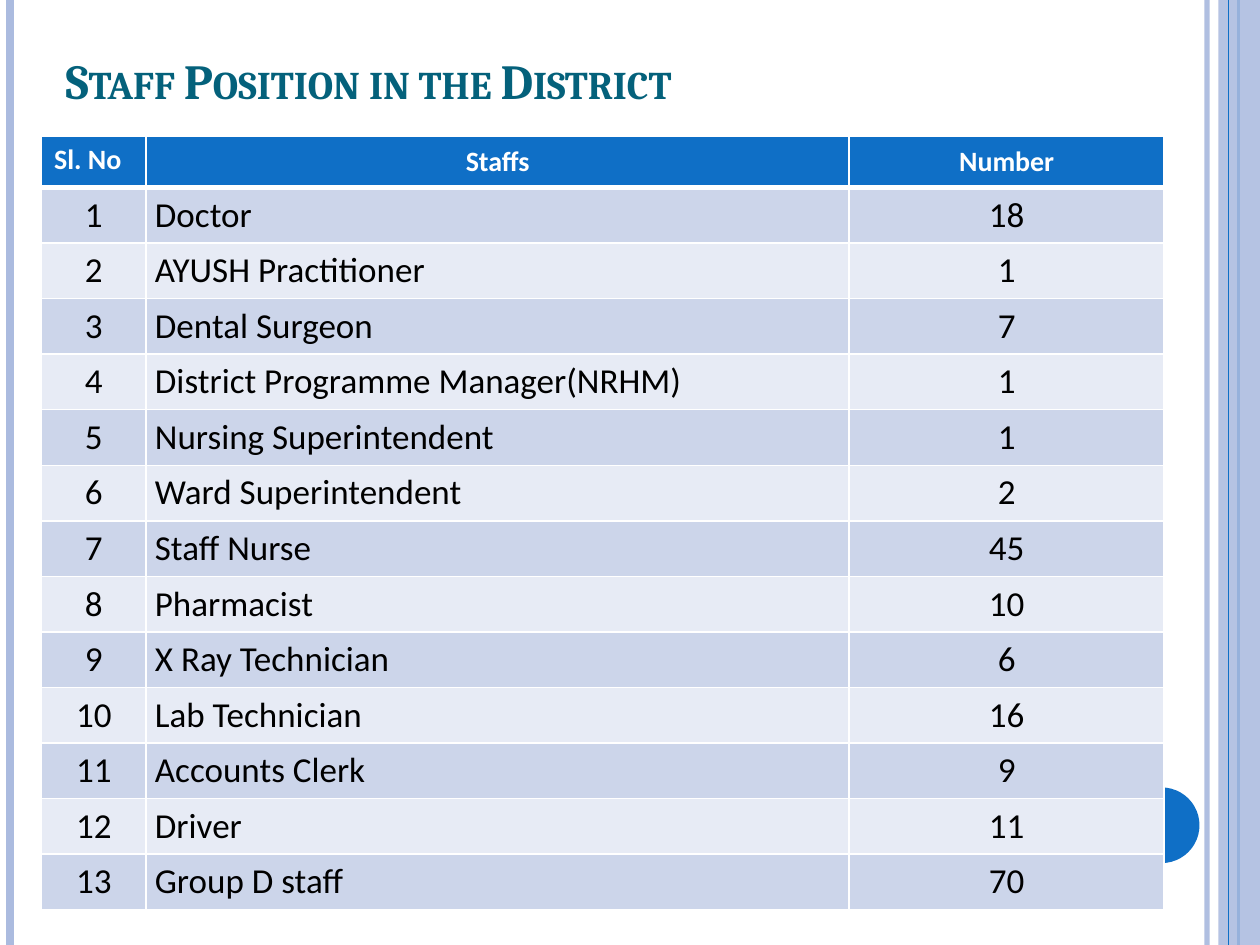
from lxml import etree
from pptx import Presentation
from pptx.dml.color import RGBColor
from pptx.enum.shapes import MSO_CONNECTOR, MSO_SHAPE
from pptx.enum.text import MSO_ANCHOR, MSO_AUTO_SIZE, PP_ALIGN
from pptx.oxml.ns import qn
from pptx.util import Inches, Pt

STRAIGHT = MSO_CONNECTOR.STRAIGHT
RECT, OVAL = MSO_SHAPE.RECTANGLE, MSO_SHAPE.OVAL
TOP, MIDDLE, BOTTOM = MSO_ANCHOR.TOP, MSO_ANCHOR.MIDDLE, MSO_ANCHOR.BOTTOM
LEFT, CENTER = PP_ALIGN.LEFT, PP_ALIGN.CENTER
NO_FIT = MSO_AUTO_SIZE.NONE

COLORS = {
    "blue": "0F6FC6", "lavender": "ABBBDF", "teal": "04617B",
    "odd": "CCD5EA", "even": "E7EBF5", "white": "FFFFFF", "black": "000000",
}
TITLE_FONT = {"name": "Cambria", "size": Pt(28), "bold": True}
HEADER_FONT = {"name": "Calibri", "size": Pt(16), "bold": True}
BODY_FONT = {"name": "Calibri", "size": Pt(20), "bold": False}
TIGHT = {"margin_left": Inches(0.07), "margin_right": Inches(0.07),
         "margin_top": 0, "margin_bottom": 0}

HEADERS = ["Sl. No", "Staffs", "Number"]
STAFF = [
    ("Doctor", 18), ("AYUSH Practitioner", 1), ("Dental Surgeon", 7),
    ("District Programme Manager(NRHM)", 1), ("Nursing Superintendent", 1),
    ("Ward Superintendent", 2), ("Staff Nurse", 45), ("Pharmacist", 10),
    ("X Ray Technician", 6), ("Lab Technician", 16), ("Accounts Clerk", 9),
    ("Driver", 11), ("Group D staff", 70),
]
COL_WIDTHS = [0.83, 5.58, 2.5]
HEADER_HEIGHT, ROW_HEIGHT = 0.41, 0.44


def rgb(name):
    return RGBColor.from_string(COLORS[name])


def set_attrs(obj, values):
    for key, value in values.items():
        setattr(obj, key, value)


def set_alpha(sp, percent):
    """Make the first colour of a shape or line partly transparent."""
    color = sp._element.spPr.find(".//" + qn("a:srgbClr"))
    etree.SubElement(color, qn("a:alpha"), val=str(percent * 1000))


class SlideBuilder:
    def __init__(self, slide):
        self.s = slide

    def add_text(self, p, text, font, color):
        r = p.add_run()
        r.text = text
        set_attrs(r.font, font)
        r.font.color.rgb = rgb(color)
        return r

    def title(self, text, left, top, width, height):
        sp = self.s.shapes.title
        set_attrs(sp, {"left": Inches(left), "top": Inches(top),
                       "width": Inches(width), "height": Inches(height)})
        tf = sp.text_frame
        set_attrs(tf, {"vertical_anchor": BOTTOM, "auto_size": NO_FIT, "word_wrap": True})
        p = tf.paragraphs[0]
        p.alignment = LEFT
        r = self.add_text(p, text, TITLE_FONT, "teal")
        r.font._element.set("cap", "small")

    def vertical_line(self, x, color, width, alpha=100):
        line = self.s.shapes.add_connector(STRAIGHT, Inches(x), 0, Inches(x), Inches(7.5))
        line.line.color.rgb = rgb(color)
        line.line.width = Pt(width)
        if alpha < 100:
            set_alpha(line, alpha)
        etree.SubElement(line._element.spPr, qn("a:effectLst"))

    def shape(self, kind, left, top, width, height, color, alpha=100):
        sp = self.s.shapes.add_shape(kind, Inches(left), Inches(top),
                                     Inches(width), Inches(height))
        sp.shadow.inherit = False
        sp.fill.solid()
        sp.fill.fore_color.rgb = rgb(color)
        sp.line.fill.background()
        if alpha < 100:
            set_alpha(sp, alpha)

    def borders(self, cell, top, bottom):
        """Draw white cell borders, 1 pt wide at the sides."""
        tc_pr = cell._tc.get_or_add_tcPr()
        for side, width in (("L", 1), ("R", 1), ("T", top), ("B", bottom)):
            ln = etree.SubElement(tc_pr, qn("a:ln" + side), w=str(Pt(width)))
            fill = etree.SubElement(ln, qn("a:solidFill"))
            etree.SubElement(fill, qn("a:srgbClr"), val=COLORS["white"])

    def cell(self, cell, text, font, color, fill, align, anchor, margins, top=1, bottom=1):
        self.borders(cell, top, bottom)
        cell.fill.solid()
        cell.fill.fore_color.rgb = rgb(fill)
        cell.vertical_anchor = anchor
        set_attrs(cell, margins)
        p = cell.text_frame.paragraphs[0]
        p.alignment = align
        self.add_text(p, text, font, color)

    def staff_table(self, left, top):
        height = HEADER_HEIGHT + ROW_HEIGHT * len(STAFF)
        table = self.s.shapes.add_table(
            len(STAFF) + 1, len(HEADERS), Inches(left), Inches(top),
            Inches(sum(COL_WIDTHS)), Inches(height)).table
        for col, width in zip(table.columns, COL_WIDTHS):
            col.width = Inches(width)
        for i, row in enumerate(table.rows):
            row.height = Inches(ROW_HEIGHT if i else HEADER_HEIGHT)
        for j, text in enumerate(HEADERS):
            self.cell(table.cell(0, j), text, HEADER_FONT, "white", "blue",
                      CENTER if j else LEFT, MIDDLE if j else TOP,
                      TIGHT if j else {}, bottom=3)
        for i, (staff, number) in enumerate(STAFF, 1):
            for j, value in enumerate((i, staff, number)):
                self.cell(table.cell(i, j), str(value), BODY_FONT, "black",
                          "odd" if i % 2 else "even", LEFT if j == 1 else CENTER,
                          MIDDLE, TIGHT if j else {}, top=3 if i == 1 else 1)


def main():
    prs = Presentation()
    prs.slide_width, prs.slide_height = Inches(10), Inches(7.5)
    slide = SlideBuilder(prs.slides.add_slide(prs.slide_layouts[5]))
    slide.vertical_line(9.58, "lavender", 3, alpha=93)
    slide.vertical_line(0.08, "lavender", 4.5)
    slide.vertical_line(9.83, "blue", 1.5)
    slide.shape(RECT, 9.67, 0, 0.33, 7.5, "lavender", alpha=87)
    slide.vertical_line(9.75, "blue", 0.75)
    slide.shape(OVAL, 8.92, 6.25, 0.6, 0.6, "blue")
    slide.title("Staff Position in the District", 0.42, 0.25, 9, 0.67)
    slide.staff_table(0.33, 1.08)
    prs.save("out.pptx")


if __name__ == "__main__":
    main()
